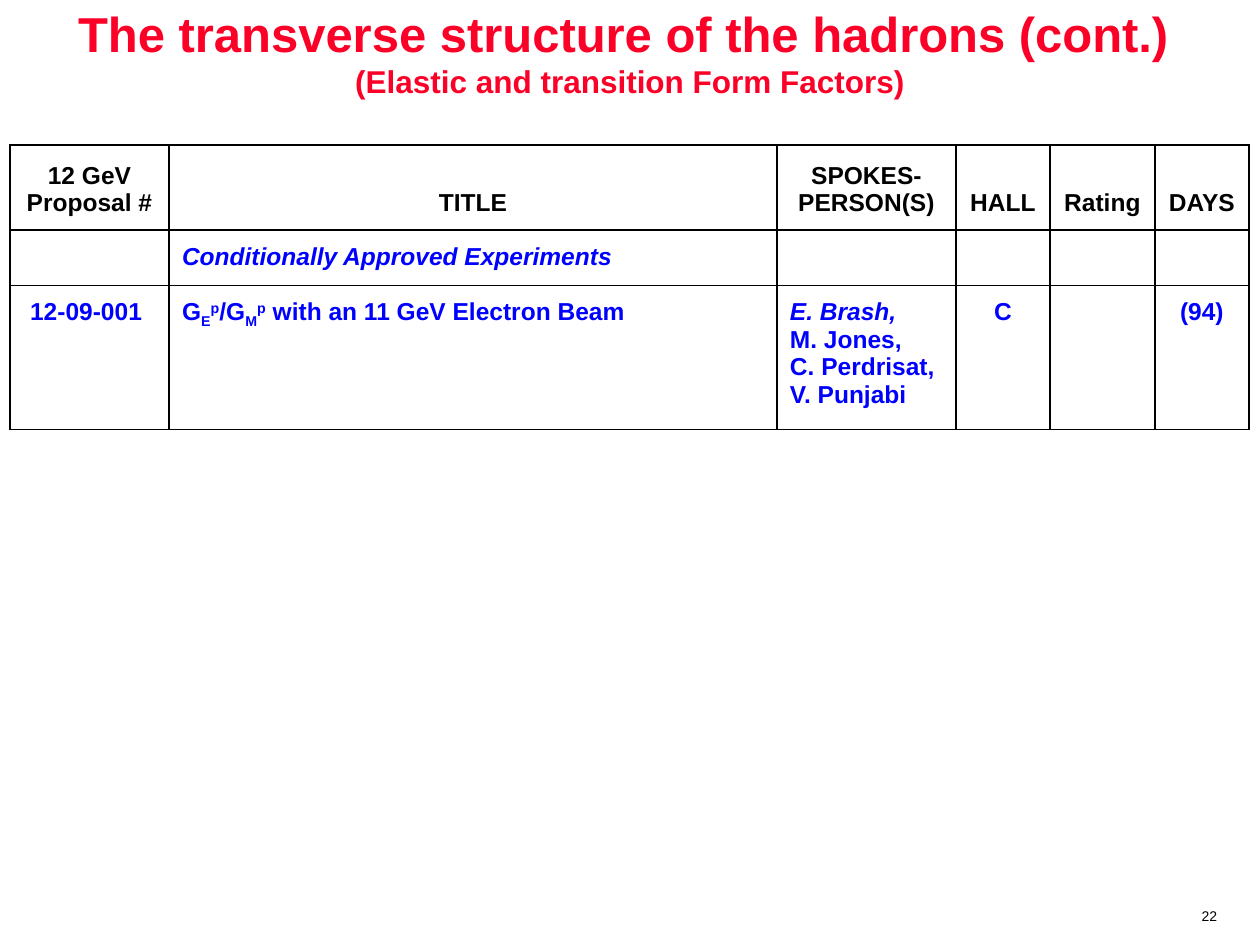
"""Build a slide listing conditionally approved form factor experiments."""
from dataclasses import dataclass, field

from pptx import Presentation
from pptx import util as u
from pptx.dml.color import RGBColor as Rgb
from pptx.enum import text as t
from pptx.oxml import parse_xml
from pptx.oxml.ns import nsdecls

PX = 914400 // 126


@dataclass(frozen=True)
class Theme:
    font: str = "Arial"
    red: str = "FC0128"
    blue: str = "0000FF"
    black: str = "000000"
    white: str = "FFFFFF"
    head: int = 28
    sub: int = 18
    body: int = 14
    note: int = 8


@dataclass(frozen=True)
class Bit:
    text: str
    slant: bool = False
    base: int = 0


@dataclass(frozen=True)
class Cell:
    bits: list[Bit] = field(default_factory=list)
    mid: bool = False


THEME = Theme()
WIDTHS = [159, 608, 179, 94, 105, 94]
HEIGHTS = [84, 54, 144]
HEADS = ["12 GeV Proposal #", "TITLE", "SPOKES-PERSON(S)", "HALL", "Rating", "DAYS"]
RATIO = [Bit("G"), Bit("E", base=-25), Bit("p", base=30),
         Bit("/G"), Bit("M", base=-25), Bit("p", base=30),
         Bit(" with an 11 GeV Electron Beam")]
PEOPLE = [Bit("E. Brash,\v", slant=True), Bit("M. Jones, \vC. Perdrisat, \vV. Punjabi")]


def mid(word: str) -> Cell:
    """Return a centred cell with one plain bit of text."""
    return Cell([Bit(word)], True)


ROWS = [
    [mid(word) for word in HEADS],
    [Cell(), Cell([Bit("Conditionally Approved Experiments", slant=True)]),
     Cell(), Cell(), Cell(), Cell()],
    [mid("12-09-001 "), Cell(RATIO), Cell(PEOPLE), mid("C"), Cell(), mid("(94)")],
]


def style(run, size: int, tint: str, bold: bool = True, slant: bool = False) -> None:
    """Set the font of a run."""
    font = run.font
    font.name, font.size = THEME.font, u.Pt(size)
    font.bold, font.italic = bold, slant
    font.color.rgb = Rgb.from_string(tint)


def pad(box, side: int, top: int) -> None:
    """Set the inner margins of a cell or text frame."""
    box.margin_left = box.margin_right = side * PX
    box.margin_top = box.margin_bottom = top * PX


def edge(cell) -> None:
    """Draw a thin line on all sides of a cell."""
    props = cell._tc.get_or_add_tcPr()
    for side in "LRTB":
        props.append(parse_xml(
            f'<a:ln{side} {nsdecls("a")} w="12700"><a:solidFill>'
            f'<a:srgbClr val="{THEME.black}"/></a:solidFill></a:ln{side}>'))


def write(para, bit: Bit, tint: str) -> None:
    """Add one bit of text to a paragraph, with its line breaks."""
    for num, line in enumerate(bit.text.split("\v")):
        if num:
            para.add_line_break()
        if line:
            run = para.add_run()
            run.text = line
            style(run, THEME.body, tint, slant=bit.slant)
            if bit.base:
                run.font._element.set("baseline", str(bit.base * 1000))


def title(slide) -> None:
    """Place and fill the two-line title."""
    shape = slide.shapes.title
    shape.left, shape.top, shape.width, shape.height = 0, 0, 1260 * PX, 103 * PX
    frame = shape.text_frame
    frame.text = "The transverse structure of the hadrons (cont.) \v(Elastic and transition Form Factors)"
    frame.auto_size = t.MSO_AUTO_SIZE.NONE
    frame.vertical_anchor = t.MSO_ANCHOR.MIDDLE
    pad(frame, 13, 6)
    para = frame.paragraphs[0]
    para.alignment = t.PP_ALIGN.CENTER
    for run, size in zip(para.runs, (THEME.head, THEME.sub)):
        style(run, size, THEME.red)


def table(slide) -> None:
    """Draw the table of experiments."""
    grid = slide.shapes.add_table(
        len(ROWS), len(WIDTHS), 10 * PX, 145 * PX, sum(WIDTHS) * PX, sum(HEIGHTS) * PX).table
    grid.first_row = grid.horz_banding = False
    for col, wide in zip(grid.columns, WIDTHS):
        col.width = wide * PX
    for row, (line, data) in enumerate(zip(grid.rows, ROWS)):
        line.height = HEIGHTS[row] * PX
        for cell, item in zip(line.cells, data):
            edge(cell)
            cell.fill.solid()
            cell.fill.fore_color.rgb = Rgb.from_string(THEME.white)
            pad(cell, 13, 13)
            cell.vertical_anchor = t.MSO_ANCHOR.TOP if row else t.MSO_ANCHOR.BOTTOM
            para = cell.text_frame.paragraphs[0]
            para.font.size = u.Pt(THEME.body)
            para.alignment = t.PP_ALIGN.CENTER if item.mid else t.PP_ALIGN.LEFT
            for bit in item.bits:
                write(para, bit, THEME.blue if row else THEME.black)


def page(slide) -> None:
    """Write the page number."""
    frame = slide.shapes.add_textbox(1188 * PX, 905 * PX, 43 * PX, 26 * PX).text_frame
    frame.text = "22"
    frame.word_wrap = False
    para = frame.paragraphs[0]
    para.alignment = t.PP_ALIGN.CENTER
    para.line_spacing, para.space_before = 0.8, u.Pt(1.6)
    style(para.runs[0], THEME.note, THEME.black, bold=False)


def main() -> None:
    """Build and save the slide."""
    deck = Presentation()
    deck.slide_width, deck.slide_height = u.Inches(10), u.Inches(7.5)
    slide = deck.slides.add_slide(deck.slide_layouts[5])
    page(slide)
    table(slide)
    title(slide)
    deck.save("out.pptx")


if __name__ == "__main__":
    main()
